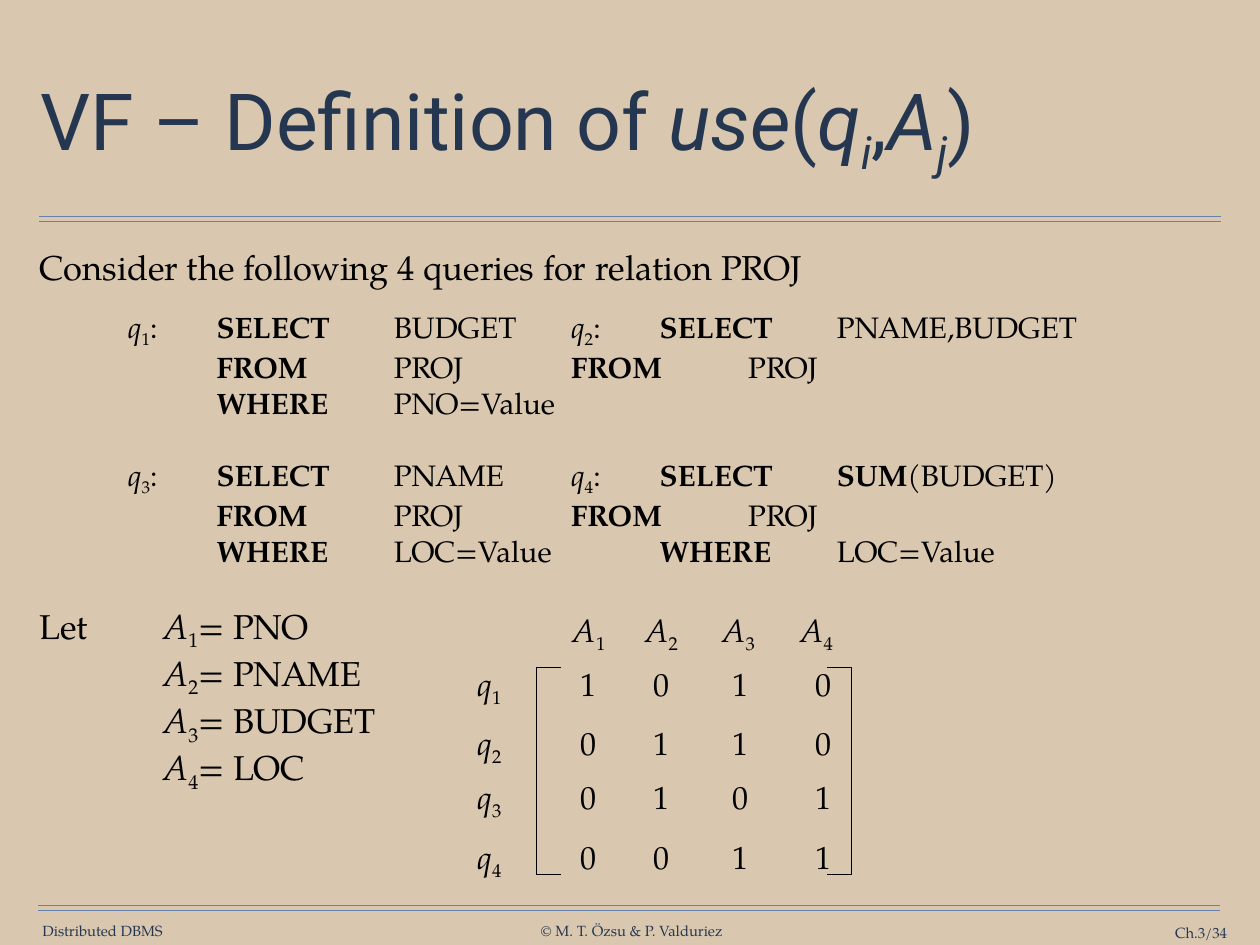
from dataclasses import dataclass

from lxml import etree
from pptx import Presentation
from pptx.dml.color import RGBColor
from pptx.enum.shapes import MSO_CONNECTOR
from pptx.enum.text import MSO_ANCHOR, MSO_AUTO_SIZE, PP_ALIGN
from pptx.oxml.ns import qn
from pptx.util import Cm, Pt

STRAIGHT = MSO_CONNECTOR.STRAIGHT
TOP, MIDDLE = MSO_ANCHOR.TOP, MSO_ANCHOR.MIDDLE
FIXED = MSO_AUTO_SIZE.NONE
LEFT, CENTER, RIGHT = PP_ALIGN.LEFT, PP_ALIGN.CENTER, PP_ALIGN.RIGHT


@dataclass(frozen=True)
class Theme:
    sand: RGBColor = RGBColor(0xD9, 0xC8, 0xAF)
    navy: RGBColor = RGBColor(0x25, 0x37, 0x50)
    rule: RGBColor = RGBColor(0x66, 0x82, 0xAA)
    ink: RGBColor = RGBColor(0, 0, 0)
    heading: str = "Roboto"
    serif: str = "TeX Gyre Pagella"
    title: Pt = Pt(64)
    text: Pt = Pt(28)
    matrix: Pt = Pt(26)
    query: Pt = Pt(24)
    footer: Pt = Pt(12)


theme = Theme()


def prepare_frame(shape, inset_x, inset_y, anchor, wrap):
    frame = shape.text_frame
    frame.auto_size = FIXED
    frame.word_wrap = wrap
    frame.vertical_anchor = anchor
    frame.margin_left = frame.margin_right = Cm(inset_x)
    frame.margin_top = frame.margin_bottom = Cm(inset_y)
    return frame


def write(para, markup, size, color=theme.ink, face=theme.serif, align=LEFT, tabs=()):
    para.alignment = align
    if tabs:
        tab_list = etree.SubElement(para._p.get_or_add_pPr(), qn("a:tabLst"))
        for stop in tabs:
            etree.SubElement(tab_list, qn("a:tab"), pos=str(Cm(stop)), algn="l")
    para.font.size = size
    para.font.name = face
    para.font.color.rgb = color
    marks = {"*": False, "~": False, "_": False}
    text = ""
    for char in markup + "\n":
        if char not in marks and char != "\n":
            text += char
            continue
        if text:
            span = para.add_run()
            span.text = text
            if marks["*"]:
                span.font.bold = True
            if marks["~"]:
                span.font.italic = True
            if marks["_"]:
                span._r.get_or_add_rPr().set("baseline", "-25000")
            text = ""
        if char in marks:
            marks[char] = not marks[char]
        else:
            para.add_line_break()
    para._p.remove(para._p.findall(qn("a:br"))[-1])


deck = Presentation()
deck.slide_width, deck.slide_height = Cm(36.12), Cm(27.1)
page = deck.slides.add_slide(deck.slide_layouts[5])
page.background.fill.solid()
page.background.fill.fore_color.rgb = theme.sand

for left, top in ((1.12, 6.2), (1.12, 6.35), (1.09, 25.96), (1.09, 26.11)):
    rule = page.shapes.add_connector(STRAIGHT, Cm(left), Cm(top), Cm(left + 33.88), Cm(top))
    rule.line.color.rgb = theme.rule
    rule.line.width = Pt(1)
    etree.SubElement(rule._element.spPr, qn("a:effectLst"))

for label, left, top, width, align in (
    ("Distributed DBMS", 1.19, 26.44, 3.51, CENTER),
    ("© M. T. Özsu & P. Valduriez", 15.47, 26.44, 5.28, CENTER),
    ("Ch.3/34", 31.27, 26.49, 3.91, RIGHT),
):
    box = page.shapes.add_textbox(Cm(left), Cm(top), Cm(width), Cm(0.51))
    frame = prepare_frame(box, 0, 0, MIDDLE, False)
    write(frame.paragraphs[0], label, theme.footer, theme.navy, align=align)

title = page.shapes.title
title.left, title.top, title.width, title.height = Cm(0.99), Cm(1.24), Cm(34.14), Cm(4.47)
para = prepare_frame(title, 0.16, 0.16, MIDDLE, True).paragraphs[0]
para.line_spacing = 0.9
write(para, "VF – Definition of ~use~(~q_i_~,~A_j_~)", theme.title, theme.navy, theme.heading)

query_tabs = [2.54 * inch for inch in (1, 2, 4, 6, 7, 8, 9)]
body_paragraphs = (
    ("Consider the following 4 queries for relation PROJ", theme.text, 0, 12, ()),
    (
        "\t~q~_1_:\t*SELECT*\tBUDGET\t~q~_2_:\t*SELECT*\tPNAME,BUDGET\n"
        "\t\t*FROM*\tPROJ\t*FROM*\tPROJ\n"
        "\t\t*WHERE*\tPNO=Value",
        theme.query, 5, 0, query_tabs,
    ),
    (
        "\t~q~_3_:\t*SELECT*\tPNAME\t~q~_4_:\t*SELECT*\t*SUM*(BUDGET)\n"
        "\t\t*FROM*\tPROJ\t*FROM*\tPROJ\n"
        "\t\t*WHERE*\tLOC=Value\t\t*WHERE*\tLOC=Value",
        theme.query, 30, 0, query_tabs,
    ),
    (
        "Let\t~A~_1_= PNO\n\t~A~_2_= PNAME\n\t~A~_3_= BUDGET\n\t~A~_4_= LOC",
        theme.text, 30, 0, (3.56,),
    ),
)
body = page.shapes.add_textbox(Cm(0.97), Cm(6.91), Cm(34.14), Cm(18.8))
frame = prepare_frame(body, 0.16, 0.16, TOP, True)
for index, (markup, size, before, after, tabs) in enumerate(body_paragraphs):
    para = frame.add_paragraph() if index else frame.paragraphs[0]
    para.space_before, para.space_after = Pt(before), Pt(after)
    write(para, markup, size, tabs=tabs)

usage = ((1, 0, 1, 0), (0, 1, 1, 0), (0, 1, 0, 1), (0, 0, 1, 1))
row_tops = (18.87, 20.57, 22.12, 23.83)
value_centers = (16.88, 18.96, 21.22, 23.62)
header_centers = (16.89, 18.97, 21.18, 23.41)
cells = [(f"~A~_{n}_", x, 17.32) for n, x in enumerate(header_centers, 1)]
for number, (top, values) in enumerate(zip(row_tops, usage), 1):
    cells.append((f"~q~_{number}_", 14.03, top))
    cells += [(str(value), x, top) for value, x in zip(values, value_centers)]
for markup, center, top in cells:
    box = page.shapes.add_textbox(Cm(center - 0.89), Cm(top), Cm(1.78), Cm(1.47))
    frame = prepare_frame(box, 0.36, 0.18, TOP, False)
    write(frame.paragraphs[0], markup, theme.matrix, align=CENTER)

for outer, inner in ((15.37, 16.08), (24.41, 23.7)):
    outline = page.shapes.build_freeform(Cm(inner), Cm(19.15))
    corners = ((outer, 19.15), (outer, 25.07), (inner, 25.07))
    outline.add_line_segments([(Cm(x), Cm(y)) for x, y in corners], close=False)
    bracket = outline.convert_to_shape()
    bracket.shadow.inherit = False
    bracket.fill.background()
    bracket.line.color.rgb = theme.ink
    bracket.line.width = Pt(1)

deck.save("out.pptx")
